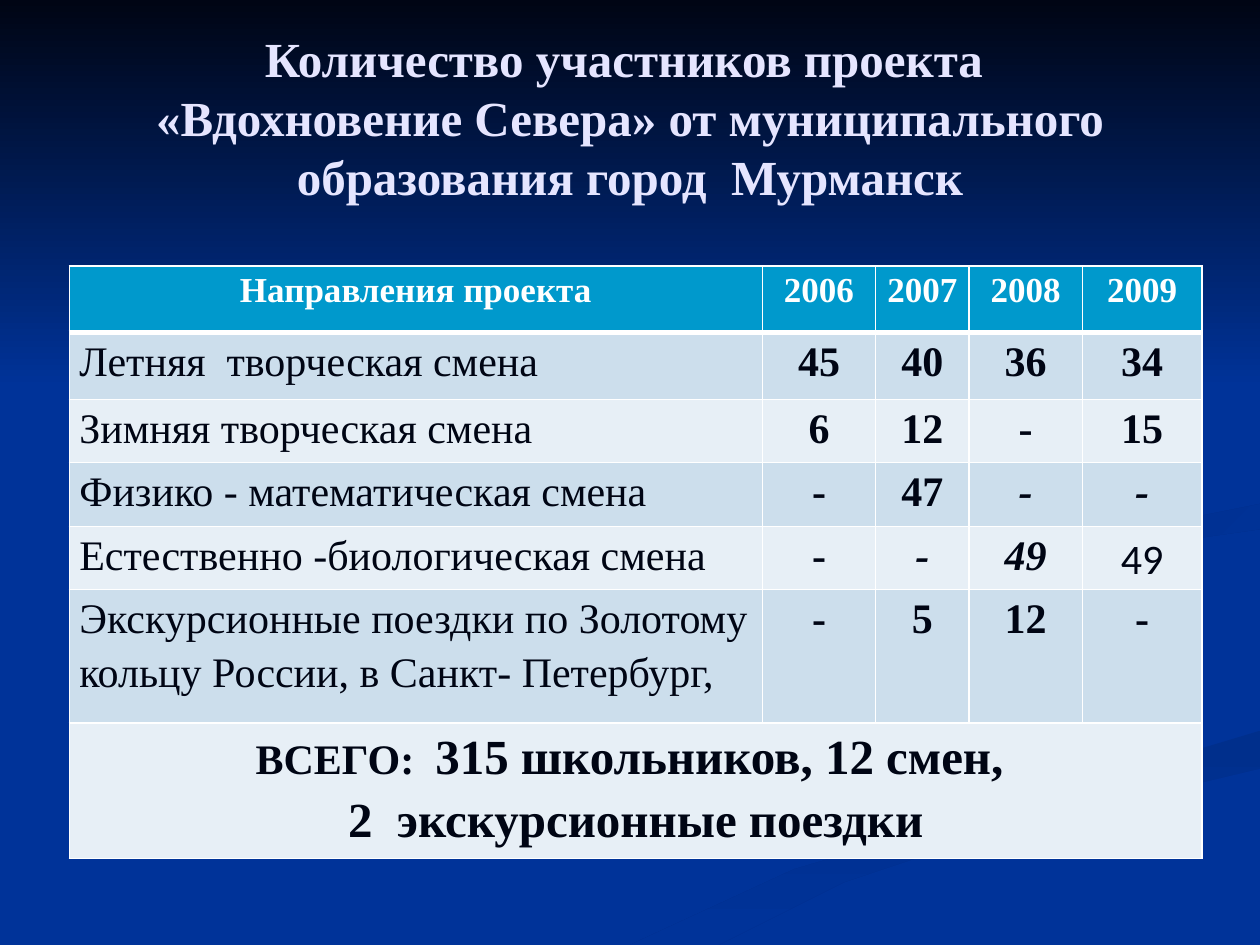
from lxml import etree
from pptx import Presentation
from pptx import util as u
from pptx.dml.color import RGBColor
from pptx.enum import shapes, text
from pptx.oxml import ns

THEME = {
    "background": "003399", "night": "000514", "title": "E5E5FF", "ribbon": "002F8C",
    "header": "0099CC", "odd": "CCDEEC", "even": "E7EFF6", "line": "FFFFFF",
    "serif": "Times New Roman", "sans": "Calibri",
    "large": 28, "body": 24, "head": 20,
}

presentation = Presentation()
presentation.slide_width, presentation.slide_height = u.Inches(10), u.Inches(7.5)
UNIT = presentation.slide_width // 100  # grid of 100 columns by 75 rows
slide = presentation.slides.add_slide(presentation.slide_layouts[6])
slide.background.fill.solid()
slide.background.fill.fore_color.rgb = RGBColor.from_string(THEME["background"])


def style(paragraph, size, color, bold=True, italic=False, font=THEME["serif"]):
    for run in paragraph.runs:
        run.font.size, run.font.name = u.Pt(size), font
        run.font.bold, run.font.italic = bold, italic
        run.font.color.rgb = RGBColor.from_string(color)


def add_border(cell, side, width):
    line = etree.SubElement(cell._tc.get_or_add_tcPr(), ns.qn("a:ln" + side), w=str(u.Pt(width)))
    fill = etree.SubElement(line, ns.qn("a:solidFill"))
    etree.SubElement(fill, ns.qn("a:srgbClr"), val=THEME["line"])


# Background: dark sky and two ribbons, each fading into the blue
sky = slide.shapes.add_shape(
    shapes.MSO_SHAPE.RECTANGLE, 0, 0, presentation.slide_width, int(30.8 * UNIT))
backdrop = [(sky, THEME["night"], 270)]
ribbons = [
    (270, [(50, 75), (57, 75), (67, 70), (79, 66), (100, 61), (100, 58), (80, 64), (63, 69)]),
    (315, [(78, 46), (83, 50), (81, 47), (86, 44), (100, 42), (100, 40), (85, 43)]),
]
for angle, outline in ribbons:
    builder = slide.shapes.build_freeform(*outline[0], scale=UNIT)
    builder.add_line_segments(outline[1:], close=True)
    backdrop.append((builder.convert_to_shape(), THEME["ribbon"], angle))
for shape, color, angle in backdrop:
    shape.shadow.inherit = False
    shape.line.fill.background()
    shape.fill.gradient()
    shape.fill.gradient_angle = angle
    for stop, stop_color in zip(shape.fill.gradient_stops, (color, THEME["background"])):
        stop.color.rgb = RGBColor.from_string(stop_color)

# Title
title = slide.shapes.add_textbox(5 * UNIT, 3 * UNIT, 90 * UNIT, int(12.5 * UNIT))
title.text_frame.word_wrap = True
title.text_frame.vertical_anchor = text.MSO_ANCHOR.MIDDLE
title.text_frame.text = ("Количество участников проекта \v«Вдохновение Севера» "
                         "от муниципального образования город  Мурманск")
title.text_frame.paragraphs[0].alignment = text.PP_ALIGN.CENTER
style(title.text_frame.paragraphs[0], THEME["large"], THEME["title"])

# Table of participants
rows = [
    ["Направления проекта", "2006", "2007", "2008", "2009"],
    ["Летняя  творческая смена", "45", "40", "36", "34"],
    ["Зимняя творческая смена", "6", "12", "-", "15"],
    ["Физико - математическая смена", "-", "47", "-", "-"],
    ["Естественно -биологическая смена", "-", "-", "49", "49"],
    ["Экскурсионные поездки по Золотому кольцу России, в Санкт- Петербург,",
     "-", "5", "12", "-"],
    ["ВСЕГО:  \n2  экскурсионные поездки", "", "", "", ""],
]
widths = [55, 9, 7.4, 9, 9.5]
heights = [5.3, 5.3, 5, 5.1, 5, 10.6, 9.9]
italics = {(3, 3), (3, 4), (4, 2), (4, 3)}
last = len(rows) - 1
table = slide.shapes.add_table(
    len(rows), len(widths), int(5.5 * UNIT), int(21.1 * UNIT),
    int(sum(widths) * UNIT), int(sum(heights) * UNIT)).table
for column, width in zip(table.columns, widths):
    column.width = int(width * UNIT)
for row, height in zip(table.rows, heights):
    row.height = int(height * UNIT)
table.cell(last, 0).merge(table.cell(last, len(widths) - 1))

for r, values in enumerate(rows):
    for c, value in enumerate(values):
        cell = table.cell(r, c)
        for side in "LRTB":
            header_edge = (r, side) in ((0, "B"), (1, "T"))
            add_border(cell, side, 3 if header_edge else 1)
        cell.fill.solid()
        fill = THEME["header"] if r == 0 else THEME["odd" if r % 2 else "even"]
        cell.fill.fore_color.rgb = RGBColor.from_string(fill)
        cell.margin_left = cell.margin_right = u.Inches(0.08)
        cell.margin_top = cell.margin_bottom = 0
        cell.text_frame.text = value
        label = c == 0 and 0 < r < last
        odd_font = (r, c) == (4, 4)
        for paragraph in cell.text_frame.paragraphs:
            paragraph.line_spacing = 1.15
            paragraph.alignment = text.PP_ALIGN.LEFT if label else text.PP_ALIGN.CENTER
            style(paragraph, THEME["body" if r else "head"], THEME["night" if r else "line"],
                  not (label or odd_font), (r, c) in italics,
                  THEME["sans" if odd_font else "serif"])

# Larger figures in the total row
total, trips = table.cell(last, 0).text_frame.paragraphs
style(trips, THEME["large"], THEME["night"])
figures = total.add_run()
figures.text = "315 школьников, 12 смен, "
style(total, THEME["large"], THEME["night"])
total.runs[0].font.size = u.Pt(THEME["body"])

presentation.save("out.pptx")
